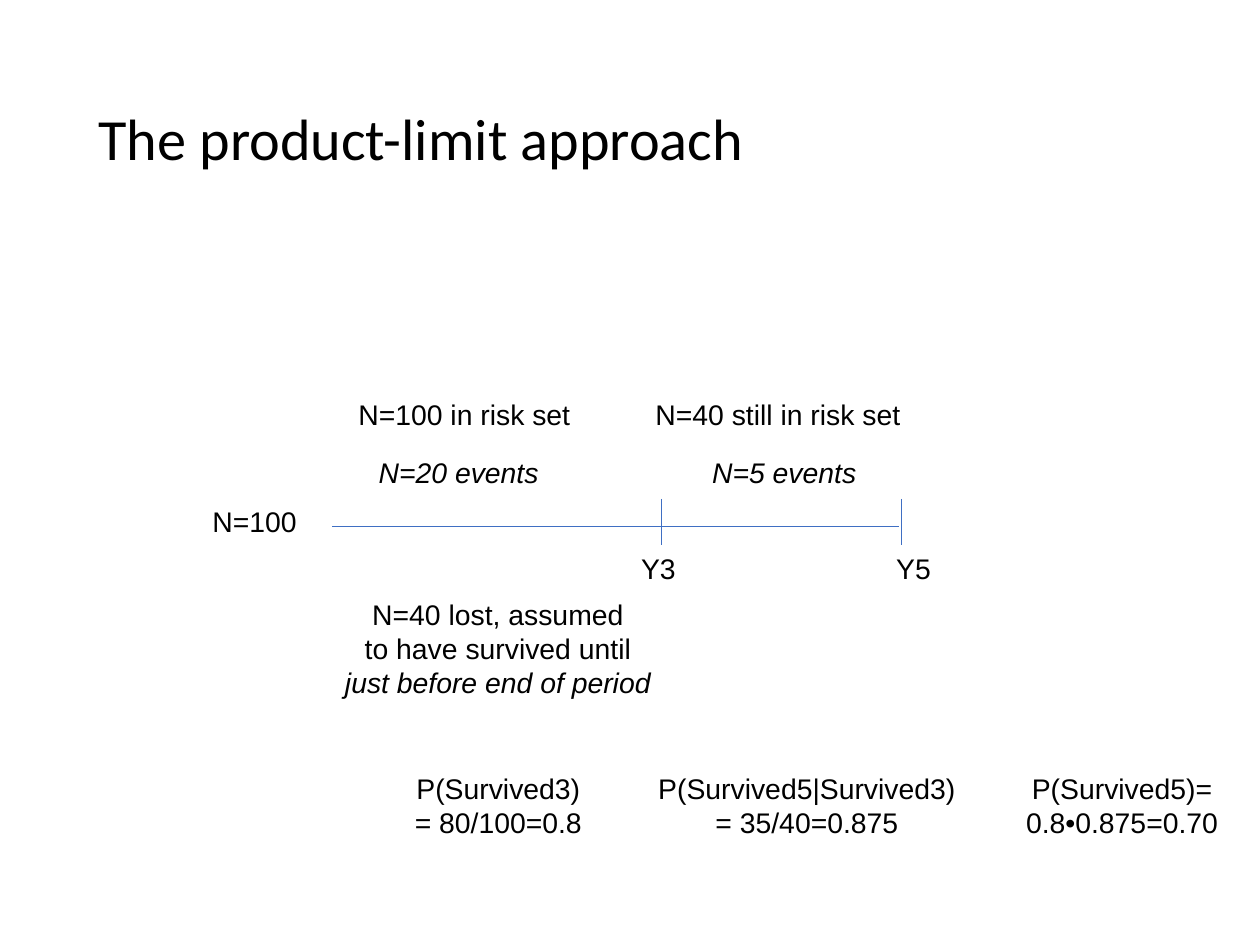
from lxml import etree
from pptx import Presentation
from pptx.dml.color import RGBColor
from pptx.enum.shapes import MSO_CONNECTOR
from pptx.enum.text import MSO_ANCHOR, MSO_AUTO_SIZE, PP_ALIGN
from pptx.oxml.ns import qn
from pptx.util import Pt

STRAIGHT = MSO_CONNECTOR.STRAIGHT
CENTER, LEFT = PP_ALIGN.CENTER, PP_ALIGN.LEFT
MIDDLE, TOP = MSO_ANCHOR.MIDDLE, MSO_ANCHOR.TOP
FIT_SHAPE, NO_FIT = MSO_AUTO_SIZE.SHAPE_TO_FIT_TEXT, MSO_AUTO_SIZE.NONE

TITLE = "The product-limit approach"
# Row tops, from the risk sets down to the survival probabilities
RISK, EVENTS, AXIS, YEARS, LOST, SURVIVAL = 248.4, 285.8, 316.8, 346.3, 375.8, 486
# (row top, centre x, width, lines of (text, italic))
LABELS = [
    (RISK, 294.8, 150.5, [("N=100 in risk set", False)]),
    (RISK, 493.9, 171.4, [("N=40 still in risk set", False)]),
    (EVENTS, 291.2, 117.4, [("N=20 events", True)]),
    (EVENTS, 497.9, 107.3, [("N=5 events", True)]),
    (AXIS, 161.6, 68.4, [("N=100", False)]),
    (YEARS, 418, 36.7, [("Y3", False)]),
    (YEARS, 580, 36.7, [("Y5", False)]),
    (LOST, 316.1, 210.2, [("N=40 lost, assumed", False),
                          ("to have survived until", False),
                          ("just before end of period", True)]),
    (SURVIVAL, 316.4, 121.7, [("P(Survived3)", False), ("= 80/100=0.8", False)]),
    (SURVIVAL, 512.3, 205.2, [("P(Survived5|Survived3)", False),
                              ("= 35/40=0.875", False)]),
    (SURVIVAL, 712.4, 137.5, [("P(Survived5)=", False), ("0.8•0.875=0.70", False)]),
]
TIMELINE = (211, 571, 334.1)  # start x, end x, y
TICKS = [419.8, 572.4]
THEME = {
    "text": RGBColor(0, 0, 0), "line": RGBColor(0x3F, 0x6F, 0xC3), "line_width": 0.75,
    "title_font": "Calibri", "title_size": 37, "title_spacing": 0.9,
    "body_font": "Arial", "body_size": 18, "body_spacing": Pt(21.6),
}
INSET_X, INSET_Y, TITLE_INSET = 7.2, 3.6, 7.9


def add_text(s, box, lines, role, align, anchor, insets, wrap, fit):
    """Add a text box with one paragraph per (text, italic) line."""
    tf = s.shapes.add_textbox(*map(Pt, box)).text_frame
    tf.word_wrap, tf.auto_size, tf.vertical_anchor = wrap, fit, anchor
    tf.margin_left = tf.margin_right = Pt(insets[0])
    tf.margin_top = tf.margin_bottom = Pt(insets[1])
    for i, (text, italic) in enumerate(lines):
        p = tf.add_paragraph() if i else tf.paragraphs[0]
        p.alignment, p.line_spacing = align, THEME[role + "_spacing"]
        r = p.add_run()
        r.text = text
        r.font.name, r.font.size = THEME[role + "_font"], Pt(THEME[role + "_size"])
        r.font.italic, r.font.color.rgb = italic, THEME["text"]


def add_line(s, *ends):
    line = s.shapes.add_connector(STRAIGHT, *map(Pt, ends))
    line.line.color.rgb, line.line.width = THEME["line"], Pt(THEME["line_width"])
    etree.SubElement(line._element.spPr, qn("a:effectLst"))


def main():
    prs = Presentation()
    prs.slide_width, prs.slide_height = Pt(800), Pt(600)
    s = prs.slides.add_slide(prs.slide_layouts[6])
    add_text(s, (54.7, 31.7, 689.8, 115.9), [(TITLE, False)], "title", LEFT, MIDDLE,
             (TITLE_INSET, TITLE_INSET), True, NO_FIT)

    start, end, y = TIMELINE
    add_line(s, start, y, end, y)
    for x in TICKS:
        add_line(s, x, AXIS, x, YEARS)

    for top, center, width, lines in LABELS:
        height = len(lines) * THEME["body_spacing"].pt + 2 * INSET_Y
        add_text(s, (center - width / 2, top, width, height), lines, "body", CENTER, TOP,
                 (INSET_X, INSET_Y), False, FIT_SHAPE)
    prs.save("out.pptx")


if __name__ == "__main__":
    main()
